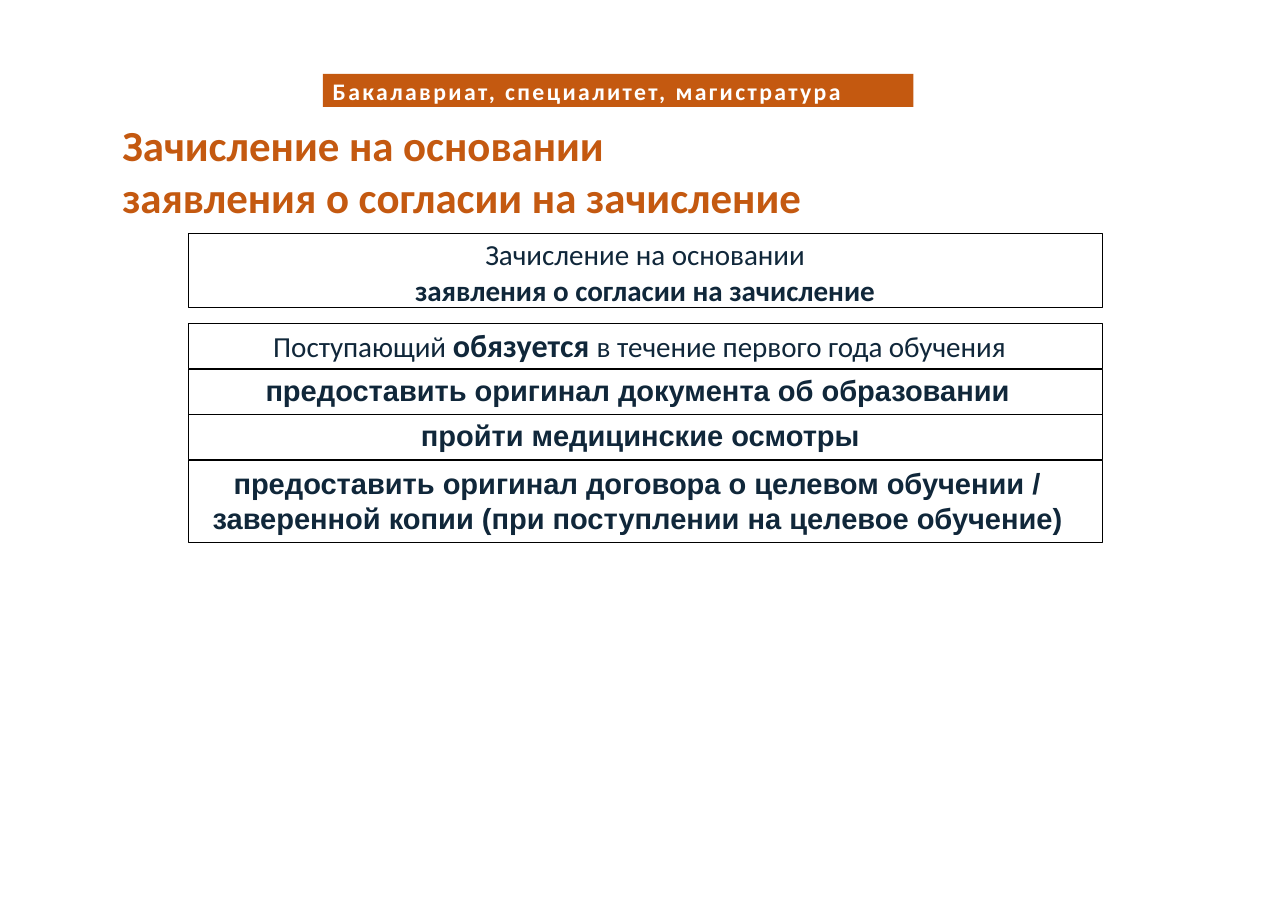
import pptx
import pptx.dml.color
import pptx.enum.shapes
import pptx.enum.text
import pptx.util
from pptx.util import Inches, Pt

ORANGE = pptx.dml.color.RGBColor(0xC4, 0x59, 0x10)
NAVY = pptx.dml.color.RGBColor(0x10, 0x27, 0x3A)
BLACK = pptx.dml.color.RGBColor(0, 0, 0)
WHITE = pptx.dml.color.RGBColor(0xFF, 0xFF, 0xFF)

LEFT = pptx.enum.text.PP_ALIGN.LEFT
CENTER = pptx.enum.text.PP_ALIGN.CENTER

BOX_LEFT, BOX_WIDTH = 1.71, 8.29

PLAIN = {"name": "Calibri", "size": Pt(19), "bold": False}
BOLD = PLAIN | {"bold": True}
EMPHASIS = BOLD | {"size": Pt(21)}
DUTY = BOLD | {"name": "Arial"}
HEADING = BOLD | {"size": Pt(28)}
BANNER = BOLD | {"size": Pt(15.5)}


def set_attributes(target, values):
    for name, value in values.items():
        setattr(target, name, value)


def write_line(paragraph, runs, color, indent=0, tracking=0, **spacing):
    """Fill one paragraph with (text, font format) runs."""
    set_attributes(paragraph, {"alignment": LEFT, "space_before": Pt(0)} | spacing)
    properties = paragraph._p.get_or_add_pPr()
    properties.set("marL", str(Inches(indent)))
    properties.set("indent", "0")
    for text, font_format in runs:
        run = paragraph.add_run()
        run.text = text
        set_attributes(run.font, font_format)
        run.font.color.rgb = color
        if tracking:
            run._r.get_or_add_rPr().set("spc", str(round(tracking * 100)))


def write_lines(shape, top_inset, lines):
    frame = shape.text_frame
    set_attributes(frame, {
        "margin_left": 0, "margin_right": 0, "margin_bottom": 0,
        "margin_top": Inches(top_inset), "word_wrap": True,
        "auto_size": pptx.enum.text.MSO_AUTO_SIZE.NONE,
        "vertical_anchor": pptx.enum.text.MSO_ANCHOR.TOP,
    })
    for index, line in enumerate(lines):
        paragraph = frame.add_paragraph() if index else frame.paragraphs[0]
        write_line(paragraph, **line)


def add_box(slide, left, top, width, height, fill=None):
    box = slide.shapes.add_shape(
        pptx.enum.shapes.MSO_SHAPE.RECTANGLE,
        Inches(left), Inches(top), Inches(width), Inches(height))
    box.shadow.inherit = False
    if fill is None:
        box.fill.background()
        box.line.color.rgb = BLACK
        box.line.width = Pt(0.25)
    else:
        box.fill.solid()
        box.fill.fore_color.rgb = fill
        box.line.fill.background()
    return box


def add_title(slide):
    title = slide.shapes.title
    set_attributes(title, {"left": Inches(1.1), "top": Inches(1.06),
                           "width": Inches(6.4), "height": Inches(0.97)})
    write_lines(title, 0.01, [
        dict(runs=[(text, HEADING)], color=ORANGE, indent=0.01,
             line_spacing=1.01, space_before=Pt(before))
        for text, before in (("Зачисление на основании", 0.8),
                             ("заявления о согласии на зачисление", 0))])


def add_banner(slide):
    banner = add_box(slide, 2.93, 0.67, 5.36, 0.3, ORANGE)
    write_lines(banner, 0.03, [
        dict(runs=[("Бакалавриат, специалитет, магистратура", BANNER)],
             color=WHITE, indent=0.09, tracking=1.6, space_before=Pt(2.5))])


def add_row(slide, top, height, top_inset, lines):
    row = add_box(slide, BOX_LEFT, top, BOX_WIDTH, height)
    write_lines(row, top_inset, [line | {"color": NAVY} for line in lines])


def main():
    presentation = pptx.Presentation()
    presentation.slide_width = Inches(11.69)
    presentation.slide_height = Inches(8.26)
    slide = presentation.slides.add_slide(presentation.slide_layouts[5])

    add_banner(slide)
    add_title(slide)

    # Basis for enrolment
    add_row(slide, 2.12, 0.67, 0.03, [
        dict(runs=[("Зачисление на основании", PLAIN)],
             alignment=CENTER, space_before=Pt(2)),
        dict(runs=[("заявления о согласии на зачисление", BOLD)],
             alignment=CENTER, space_before=Pt(0.5))])

    # What the applicant undertakes
    add_row(slide, 2.93, 0.41, 0.02, [
        dict(runs=[("Поступающий ", PLAIN), ("обязуется ", EMPHASIS),
                   ("в течение первого года обучения", PLAIN)],
             indent=0.77, space_before=Pt(1.7))])

    # Duties
    add_row(slide, 3.35, 0.41, 0.03, [
        dict(runs=[("предоставить оригинал документа об образовании", DUTY)],
             indent=0.7, space_before=Pt(2.2))])
    add_row(slide, 3.76, 0.41, 0.03, [
        dict(runs=[("пройти медицинские осмотры", DUTY)],
             indent=2.11, space_before=Pt(1.2))])
    add_row(slide, 4.18, 0.74, 0.05, [
        dict(runs=[(text, DUTY)], indent=indent,
             line_spacing=Pt(22.6), space_before=Pt(before))
        for text, indent, before in (
            ("предоставить оригинал договора о целевом обучении /", 0.41, 3.6),
            ("заверенной копии (при поступлении на целевое обучение)", 0.22, 0))])

    presentation.save("out.pptx")


if __name__ == "__main__":
    main()
